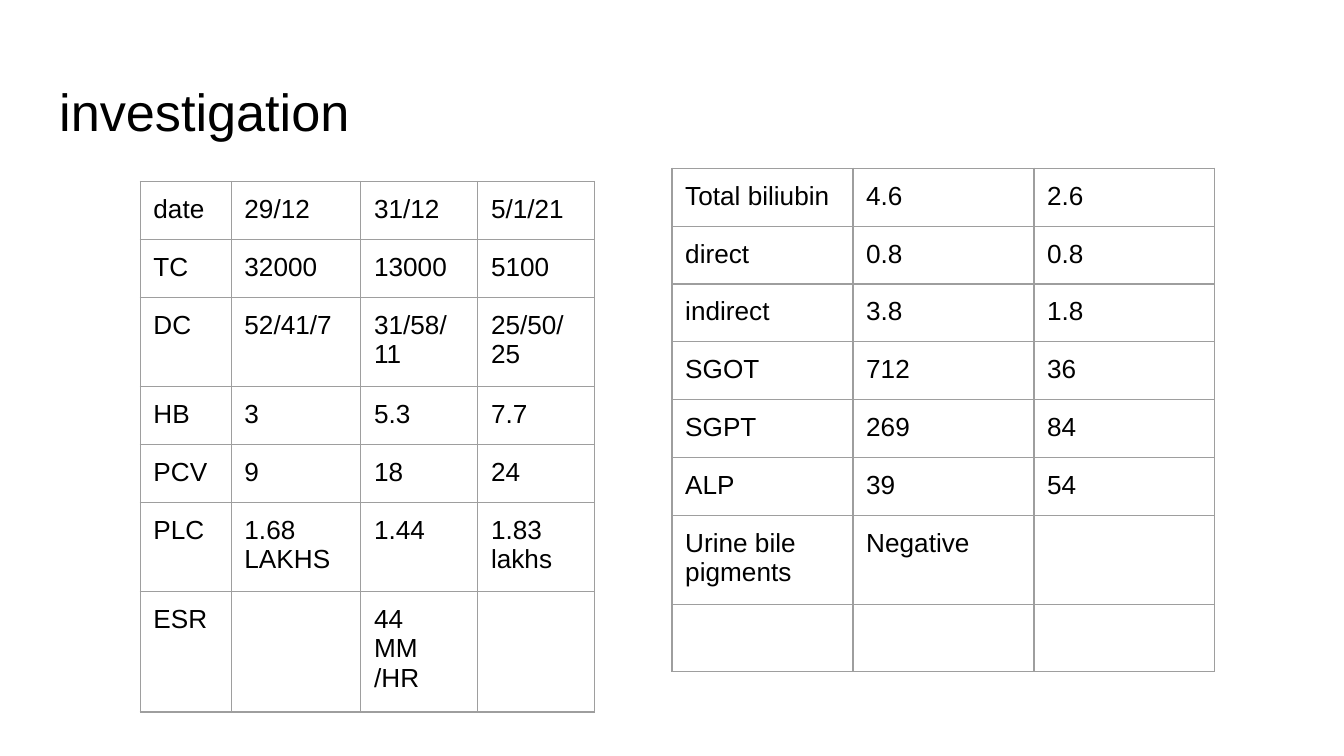
"""Build the investigation slide with its two tables of laboratory results."""
from lxml.etree import SubElement
from pptx import Presentation
from pptx.dml.color import RGBColor
from pptx.oxml.ns import qn
from pptx.util import Cm, Pt

INK = "000000"
GRID = "9E9E9E"
INSET = Cm(0.25)

BLOOD_COUNTS = [
    ["date", "29/12", "31/12", "5/1/21"],
    ["TC", "32000", "13000", "5100"],
    ["DC", "52/41/7", "31/58/\n11", "25/50/\n25"],
    ["HB", "3", "5.3", "7.7"],
    ["PCV", "9", "18", "24"],
    ["PLC", "1.68 LAKHS", "1.44", "1.83 lakhs"],
    ["ESR", "", "44 MM /HR", ""],
]
LIVER_TESTS = [
    ["Total biliubin", "4.6", "2.6"],
    ["direct", "0.8", "0.8"],
    ["indirect", "3.8", "1.8"],
    ["SGOT", "712", "36"],
    ["SGPT", "269", "84"],
    ["ALP", "39", "54"],
    ["Urine bile pigments", "Negative", ""],
    ["", "", ""],
]


def color(hex_code):
    """Turn a hex string into a colour."""
    return RGBColor.from_string(hex_code)


def write(frame, text, size):
    """Put text into a frame and set the font of its paragraphs."""
    frame.text = text
    frame.word_wrap = True
    for paragraph in frame.paragraphs:
        paragraph.font.name = "Arial"
        paragraph.font.size = Pt(size)
        paragraph.font.color.rgb = color(INK)


def set_insets(target):
    """Give a cell or text frame equal margins on all sides."""
    target.margin_left = target.margin_right = INSET
    target.margin_top = target.margin_bottom = INSET


def add_borders(cell):
    """Draw a thin grey line on each side of a cell."""
    properties = cell._tc.get_or_add_tcPr()
    for position, side in enumerate(("lnL", "lnR", "lnT", "lnB")):
        line = properties.makeelement(qn(f"a:{side}"), {"w": str(Pt(0.75))})
        fill = SubElement(line, qn("a:solidFill"))
        SubElement(fill, qn("a:srgbClr"), val=GRID)
        properties.insert(position, line)


def add_title(slide, text):
    """Add the slide heading."""
    heading = slide.shapes.add_textbox(Cm(0.87), Cm(1.24), Cm(23.67), Cm(1.6))
    set_insets(heading.text_frame)
    write(heading.text_frame, text, 28)


def add_results(slide, results, left, top, widths, row_height):
    """Add a bordered table of results."""
    table = slide.shapes.add_table(
        len(results), len(widths), Cm(left), Cm(top),
        Cm(sum(widths)), Cm(row_height * len(results))).table
    table.first_row = table.horz_banding = False
    for column, width in zip(table.columns, widths):
        column.width = Cm(width)
    for row, values in zip(table.rows, results):
        row.height = Cm(row_height)
        for cell, value in zip(row.cells, values):
            cell.fill.background()
            set_insets(cell)
            add_borders(cell)
            if value:
                write(cell.text_frame, value, 14)


def main():
    """Build and save the slide."""
    deck = Presentation()
    deck.slide_width, deck.slide_height = Cm(25.4), Cm(14.29)
    slide = deck.slides.add_slide(deck.slide_layouts[6])
    add_title(slide, "investigation")
    add_results(slide, BLOOD_COUNTS, 2.65, 3.43, [1.72, 2.45, 2.21, 2.21], 1.06)
    add_results(slide, LIVER_TESTS, 12.7, 3.18, [3.42] * 3, 1.09)
    deck.save("out.pptx")


if __name__ == "__main__":
    main()
